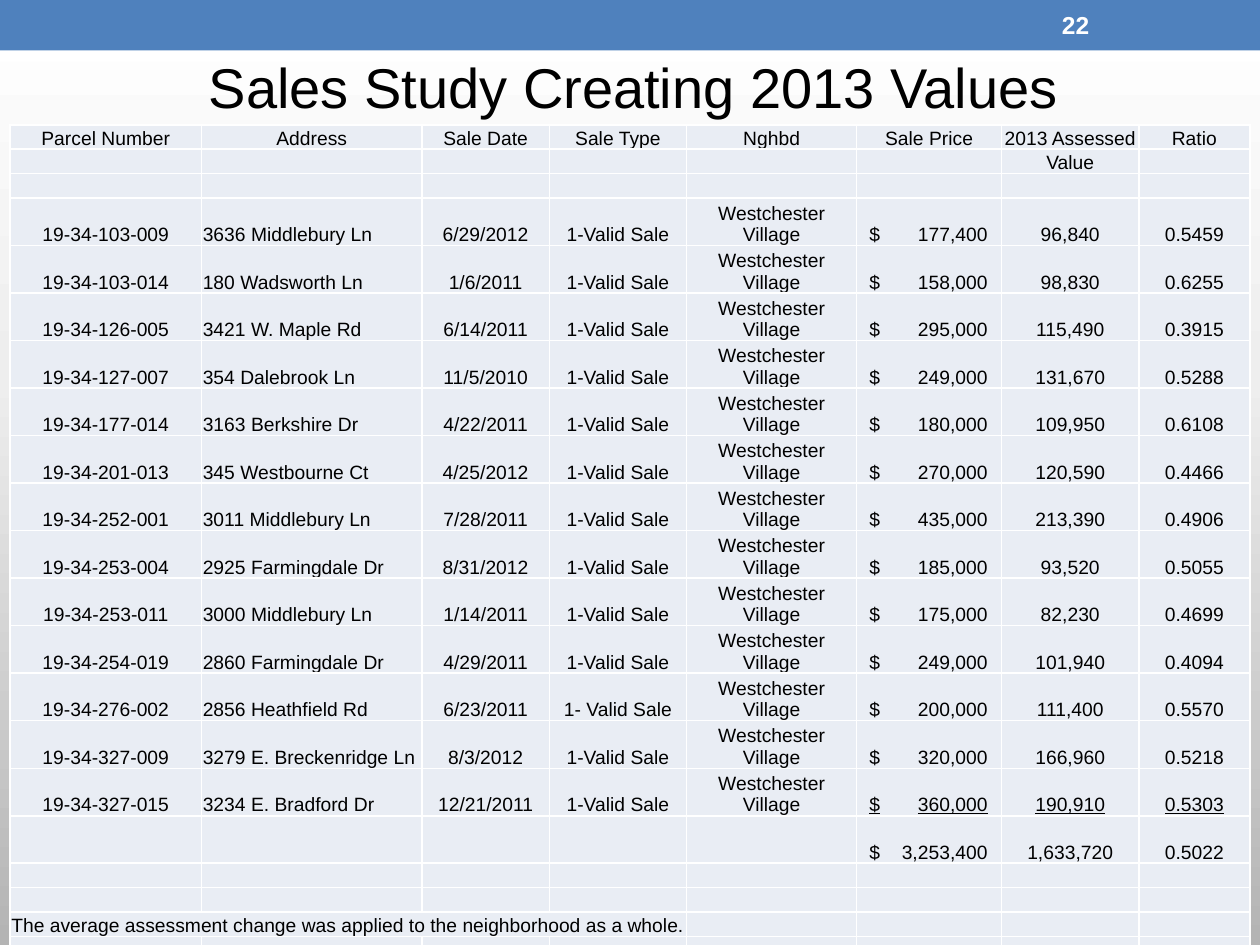
from copy import deepcopy

from lxml.etree import SubElement
from pptx import Presentation
from pptx.dml.color import RGBColor
from pptx.enum.shapes import MSO_SHAPE
from pptx.enum.text import MSO_ANCHOR, MSO_AUTO_SIZE, PP_ALIGN
from pptx.oxml import parse_xml
from pptx.oxml.ns import nsdecls, qn
from pptx.util import Inches, Pt

WHITE = RGBColor(0xFF, 0xFF, 0xFF)
BLACK = RGBColor(0x00, 0x00, 0x00)
BLUE = RGBColor(0x4F, 0x81, 0xBD)
PALE = RGBColor(0xE9, 0xED, 0xF4)
LIGHT_GRAY = RGBColor(0xEE, 0xEE, 0xEE)
GRAY = RGBColor(0xB4, 0xB4, 0xB4)
BACKDROP = [(0, WHITE), (0.4, LIGHT_GRAY), (1, GRAY)]

TITLE = "Sales Study Creating 2013 Values"
PAGE_NUMBER = "22"
NOTE = "The average assessment change was applied to the neighborhood as a whole."
HEADERS = ["Parcel Number", "Address", "Sale Date", "Sale Type", "Nghbd",
           "Sale Price", "2013 Assessed", "Ratio"]
HEADER_REST = [""] * 6 + ["Value", ""]
VILLAGE = "Westchester Village"
VALID = "1-Valid Sale"
SALES = [
    ("19-34-103-009", "3636 Middlebury Ln", "6/29/2012", VALID, "177,400", "96,840", "0.5459"),
    ("19-34-103-014", "180 Wadsworth Ln", "1/6/2011", VALID, "158,000", "98,830", "0.6255"),
    ("19-34-126-005", "3421 W. Maple Rd", "6/14/2011", VALID, "295,000", "115,490", "0.3915"),
    ("19-34-127-007", "354 Dalebrook Ln", "11/5/2010", VALID, "249,000", "131,670", "0.5288"),
    ("19-34-177-014", "3163 Berkshire Dr", "4/22/2011", VALID, "180,000", "109,950", "0.6108"),
    ("19-34-201-013", "345 Westbourne Ct", "4/25/2012", VALID, "270,000", "120,590", "0.4466"),
    ("19-34-252-001", "3011 Middlebury Ln", "7/28/2011", VALID, "435,000", "213,390", "0.4906"),
    ("19-34-253-004", "2925 Farmingdale Dr", "8/31/2012", VALID, "185,000", "93,520", "0.5055"),
    ("19-34-253-011", "3000 Middlebury Ln", "1/14/2011", VALID, "175,000", "82,230", "0.4699"),
    ("19-34-254-019", "2860 Farmingdale Dr", "4/29/2011", VALID, "249,000", "101,940", "0.4094"),
    ("19-34-276-002", "2856 Heathfield Rd", "6/23/2011", "1- Valid Sale", "200,000", "111,400", "0.5570"),
    ("19-34-327-009", "3279 E. Breckenridge Ln", "8/3/2012", VALID, "320,000", "166,960", "0.5218"),
    ("19-34-327-015", "3234 E. Bradford Dr", "12/21/2011", VALID, "360,000", "190,910", "0.5303"),
]
TOTALS = [""] * 5 + ["$\t3,253,400", "1,633,720", "0.5022"]
BLANK = [""] * len(HEADERS)
ROWS = (
    [HEADERS, HEADER_REST, BLANK]
    + [[*sale[:4], VILLAGE, f"$\t{sale[4]}", *sale[5:]] for sale in SALES]
    + [TOTALS, BLANK, BLANK, [NOTE] + BLANK[1:], BLANK]
)
FIRST_SALE = 3
LAST_SALE = FIRST_SALE + len(SALES) - 1
TOTAL_ROW = LAST_SALE + 1
NOTE_ROW = TOTAL_ROW + 3
ADDRESS, PRICE = 1, 5

COLUMN_WIDTHS = [1.52, 1.75, 1.01, 1.09, 1.35, 1.15, 1.09, 0.88]
TABLE_HEIGHT = 6.59
SHORT_ROW = 0.19
TALL_COUNT = len(SALES) + 1
TALL_ROW = (TABLE_HEIGHT - SHORT_ROW * (len(ROWS) - TALL_COUNT)) / TALL_COUNT
PRICE_INSET, PRICE_TAB = 0.1, 0.94


def write(frame, text, size=11, color=BLACK, bold=False, underline=False, align=PP_ALIGN.CENTER):
    """Write one formatted line into a text frame."""
    para = frame.paragraphs[0]
    para.alignment = align
    span = para.add_run()
    span.text = text
    span.font.name = "Arial"
    span.font.size = Pt(size)
    span.font.color.rgb = color
    span.font.bold = bold
    span.font.underline = underline
    return para


def paint_background(page):
    """Fill the page with a vertical gradient."""
    fill = page.background.fill
    fill.gradient()
    fill.gradient_angle = 270
    stop_list = fill._fill._gradFill.find(qn("a:gsLst"))
    stop_list.insert(1, deepcopy(stop_list[0]))
    for stop, (position, color) in zip(fill.gradient_stops, BACKDROP):
        stop.position = position
        stop.color.rgb = color


def add_band(page, width, top, height, color):
    """Add a borderless band from the left edge."""
    band = page.shapes.add_shape(MSO_SHAPE.RECTANGLE, 0, Inches(top), width, Inches(height))
    band.shadow.inherit = False
    band.fill.solid()
    band.fill.fore_color.rgb = color
    band.line.fill.background()


def style_cell(cell):
    """Give a cell its borders, fill and insets."""
    properties = cell._tc.get_or_add_tcPr()
    for side in ("lnL", "lnR", "lnT", "lnB"):
        properties.append(parse_xml(
            f'<a:{side} {nsdecls("a")} w="12700"><a:solidFill>'
            f'<a:srgbClr val="{WHITE}"/></a:solidFill></a:{side}>'))
    cell.fill.solid()
    cell.fill.fore_color.rgb = PALE
    cell.vertical_anchor = MSO_ANCHOR.BOTTOM
    cell.margin_left = cell.margin_right = cell.margin_top = Inches(0.01)
    cell.margin_bottom = 0


def fill_cell(cell, text, row, column):
    """Write a cell's value, aligned by its place in the table."""
    if not text:
        cell.text_frame.paragraphs[0]._p.get_or_add_endParaRPr().set("sz", "1100")
        return
    is_sale = FIRST_SALE <= row <= LAST_SALE
    is_price = column == PRICE and FIRST_SALE <= row <= TOTAL_ROW
    is_left = is_price or row == NOTE_ROW or (column == ADDRESS and is_sale)
    para = write(cell.text_frame, text, underline=row == LAST_SALE and column >= PRICE,
                 align=PP_ALIGN.LEFT if is_left else PP_ALIGN.CENTER)
    if is_price:
        cell.margin_left = Inches(PRICE_INSET)
        tabs = SubElement(para._p.get_or_add_pPr(), qn("a:tabLst"))
        SubElement(tabs, qn("a:tab"), pos=str(Inches(PRICE_TAB)), algn="r")


def add_sales_table(page):
    """Add the table of sales with its totals and note."""
    table = page.shapes.add_table(
        len(ROWS), len(HEADERS), Inches(0.08), Inches(0.99),
        Inches(sum(COLUMN_WIDTHS)), Inches(TABLE_HEIGHT)).table
    table.first_row = table.horz_banding = False
    for column, width in zip(table.columns, COLUMN_WIDTHS):
        column.width = Inches(width)
    for row, values in enumerate(ROWS):
        is_tall = FIRST_SALE <= row <= TOTAL_ROW
        table.rows[row].height = Inches(TALL_ROW if is_tall else SHORT_ROW)
        for column, text in enumerate(values):
            cell = table.cell(row, column)
            style_cell(cell)
            fill_cell(cell, text, row, column)
    table.cell(NOTE_ROW, 0).merge(table.cell(NOTE_ROW, 3))


def main():
    """Build and save the slide."""
    deck = Presentation()
    deck.slide_width, deck.slide_height = Inches(10), Inches(7.5)
    page = deck.slides.add_slide(deck.slide_layouts[5])
    paint_background(page)
    add_band(page, deck.slide_width, 0.24, 0.25, WHITE)
    add_band(page, deck.slide_width, 0, 0.4, BLUE)

    title = page.shapes.title
    title.left, title.top, title.width, title.height = map(Inches, (1.47, 0.36, 7.12, 0.64))
    title.text_frame.word_wrap = False
    title.text_frame.auto_size = MSO_AUTO_SIZE.NONE
    write(title.text_frame, TITLE, size=32)
    page.shapes._spTree.append(title._element)

    box = page.shapes.add_textbox(*map(Inches, (8.33, 0.02, 1.17, 0.36)))
    box.text_frame.word_wrap = True
    box.text_frame.vertical_anchor = MSO_ANCHOR.MIDDLE
    write(box.text_frame, PAGE_NUMBER, size=14, color=WHITE, bold=True, align=PP_ALIGN.LEFT)

    add_sales_table(page)
    deck.save("out.pptx")


if __name__ == "__main__":
    main()
